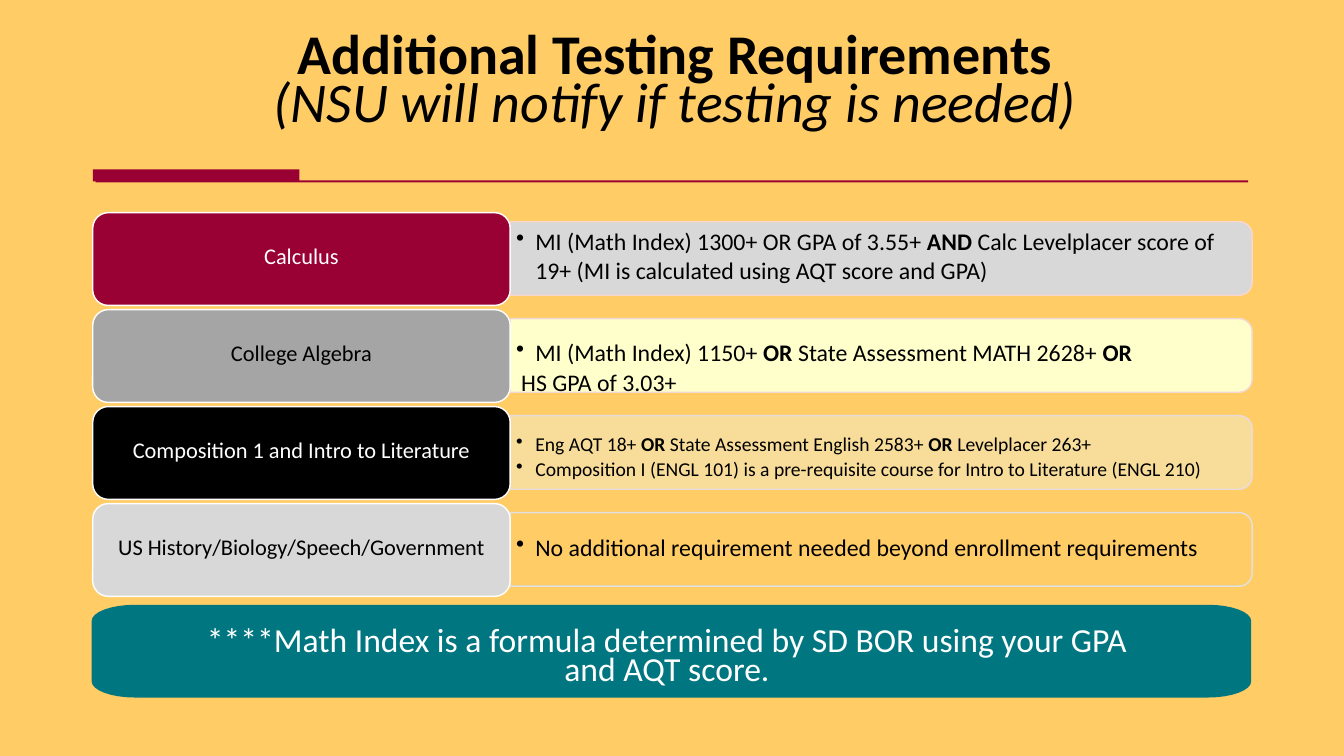
"""Build the slide on additional testing requirements."""
from math import cos, pi, sin

from lxml import etree
from pptx import Presentation
from pptx.dml.color import RGBColor
from pptx.enum.shapes import MSO_SHAPE
from pptx.enum.text import MSO_ANCHOR, PP_ALIGN
from pptx.oxml.ns import qn
from pptx.util import Inches, Pt

RECTANGLE, ROUNDED = MSO_SHAPE.RECTANGLE, MSO_SHAPE.ROUNDED_RECTANGLE
TOP, MIDDLE = MSO_ANCHOR.TOP, MSO_ANCHOR.MIDDLE
LEFT, CENTER = PP_ALIGN.LEFT, PP_ALIGN.CENTER

MARGIN, LABEL_WIDTH, PANEL_WIDTH = 0.92, 4.14, 7.36
ROW_TOP, ROW_PITCH, ROW_HEIGHT = 2.11, 0.962, 0.92
PANEL_INSET, PANEL_HEIGHT = 0.09, 0.73
PANEL_LEFT = MARGIN + LABEL_WIDTH
ARC_STEPS = 8
QUARTERS = {"right": (-1, 0), "all": (-1, 0, 1, 2)}

ROWS = [
    ("Calculus", "990033", "FFFFFF", "D8D8D8", "F8D7CD", 17, 0.05,
     ["• MI (Math Index) 1300+ OR GPA of 3.55+ **AND** Calc Levelplacer score of "
      "19+ (MI is calculated using AQT score and GPA)"]),
    ("College Algebra", "A5A5A5", "000000", "FFFFCC", "F1D8D3", 17, 0.19,
     ["• MI (Math Index) 1150+ **OR** State Assessment MATH 2628+ **OR**",
      "HS GPA of 3.03+"]),
    ("Composition 1 and Intro to Literature", "000000", "FFFFFF", "F8DD9A",
     "E9DBDA", 14, 0.16,
     ["• Eng AQT 18+ **OR** State Assessment English 2583+ **OR** Levelplacer 263+",
      "• Composition I (ENGL 101) is a pre-requisite course for Intro to "
      "Literature (ENGL 210)"]),
    ("US History/Biology/Speech/Government", "D8D8D8", "000000", "FFCC66",
     "E1E1E1", 17, 0.2,
     ["• No additional requirement needed beyond enrollment requirements"]),
]

presentation = Presentation()
presentation.slide_width, presentation.slide_height = Inches(13.33), Inches(7.5)
slide = presentation.slides.add_slide(presentation.slide_layouts[6])
shapes = slide.shapes


def paint(shape, fill, line=None):
    """Give a shape a flat fill and an optional one-point outline."""
    shape.shadow.inherit = False
    shape.fill.solid()
    shape.fill.fore_color.rgb = RGBColor.from_string(fill)
    if line:
        shape.line.color.rgb = RGBColor.from_string(line)
        shape.line.width = Pt(1)
    else:
        shape.line.fill.background()


def write(shape, lines, size, color, align, anchor, insets, spacing=None, gap=0):
    """Write lines with ** around bold words and • before bulleted ones."""
    frame = shape.text_frame
    frame.word_wrap, frame.vertical_anchor = True, anchor
    (frame.margin_left, frame.margin_top,
     frame.margin_right, frame.margin_bottom) = map(Inches, insets)
    for index, line in enumerate(lines):
        paragraph = frame.add_paragraph() if index else frame.paragraphs[0]
        paragraph.alignment = align
        if spacing:
            paragraph.line_spacing = Pt(spacing)
        if index:
            paragraph.space_before = Pt(gap)
        properties = paragraph._p.get_or_add_pPr()
        if line.startswith("• "):
            properties.set("marL", str(Inches(0.2)))
            properties.set("indent", str(Inches(-0.19)))
            etree.SubElement(properties, qn("a:buChar")).set("char", "•")
        elif align == LEFT:
            properties.set("marL", str(Inches(0.06)))
        paragraph.font.name, paragraph.font.size = "Calibri", Pt(size)
        paragraph.font.color.rgb = RGBColor.from_string(color)
        for part, words in enumerate(line.removeprefix("• ").split("**")):
            if words:
                run = paragraph.add_run()
                run.text = words
                if part % 2:
                    run.font.bold = True


slide.background.fill.solid()
slide.background.fill.fore_color.rgb = RGBColor.from_string("FFCC66")

title = shapes.add_textbox(Inches(1.01), Inches(0.31), Inches(11.37), Inches(1.05))
write(title, ["Additional Testing Requirements", "(NSU will notify if testing is needed)"],
      40, "000000", CENTER, TOP, (0, 0.07, 0, 0), spacing=34.1)
heading, note = title.text_frame.paragraphs
heading.font.bold = True
note.font.italic = True

for box in [(0.95, 1.79, 11.43, 0.02), (MARGIN, 1.68, 2.05, 0.12)]:
    paint(shapes.add_shape(RECTANGLE, *map(Inches, box)), "990033")

panel_boxes = [(PANEL_LEFT, ROW_TOP + PANEL_INSET + row * ROW_PITCH, PANEL_WIDTH,
                PANEL_HEIGHT, 0.13, 0.13, "right") for row in range(len(ROWS))]
banner_box = (0.91, 6, 11.5, 0.92, 0.43, 0.16, "all")
outlines = []
for left, top, width, height, radius_x, radius_y, corners in panel_boxes + [banner_box]:
    right, bottom = left + width, top + height
    points = [] if corners == "all" else [(left, bottom), (left, top)]
    for quarter in QUARTERS[corners]:
        center_x = right - radius_x if quarter < 1 else left + radius_x
        center_y = top + radius_y if quarter in (-1, 2) else bottom - radius_y
        for step in range(ARC_STEPS + 1):
            angle = (quarter + step / ARC_STEPS) * pi / 2
            points.append((center_x + radius_x * cos(angle),
                           center_y + radius_y * sin(angle)))
    points = [(Inches(x), Inches(y)) for x, y in points]
    builder = shapes.build_freeform(*points[0], scale=1.0)
    builder.add_line_segments(points[1:], close=True)
    outlines.append(builder.convert_to_shape())
*panels, banner = outlines

for row, (name, fill, ink, panel_fill, edge, size, inset, lines) in enumerate(ROWS):
    paint(panels[row], panel_fill, edge)
    write(panels[row], lines, size, "000000", LEFT, TOP, (0.05, inset, 0.26, 0), gap=1)
    label = shapes.add_shape(ROUNDED, Inches(MARGIN), Inches(ROW_TOP + row * ROW_PITCH),
                             Inches(LABEL_WIDTH), Inches(ROW_HEIGHT))
    paint(label, fill, "FFFFFF")
    write(label, [name], 16, ink, CENTER, MIDDLE, (0, 0, 0, 0.06))

paint(banner, "007681")
write(banner, ["****Math Index is a formula determined by SD BOR using your GPA".replace("****", "∗∗∗∗"),
               "and AQT score."],
      24, "FFFFFF", CENTER, TOP, (0.23, 0.29, 0.32, 0), spacing=18, gap=2.6)
for run in banner.text_frame.paragraphs[0].runs:
    run.text = run.text.replace("∗", "*")

presentation.save("out.pptx")
